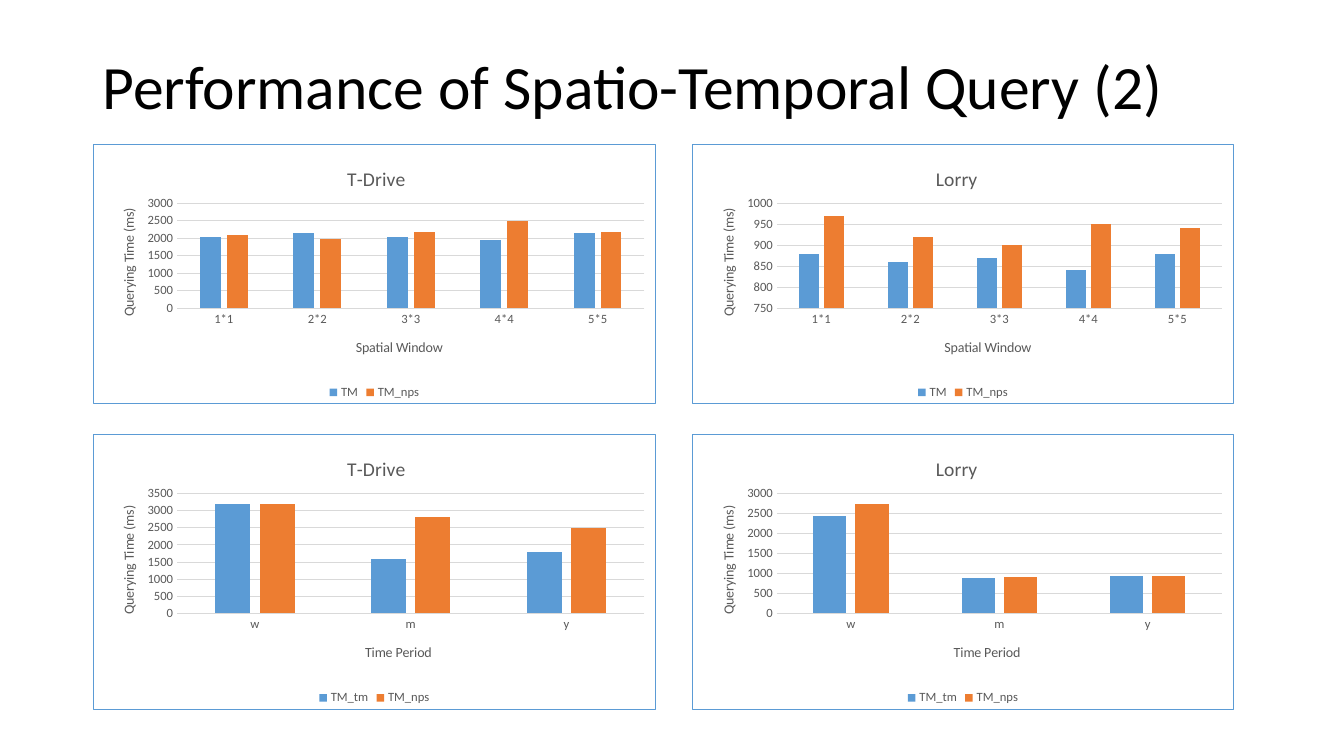
from pptx import Presentation
from pptx.chart.data import CategoryChartData
from pptx.dml.color import RGBColor
from pptx.enum.chart import XL_CHART_TYPE, XL_LEGEND_POSITION, XL_TICK_MARK
from pptx.enum.text import MSO_ANCHOR, PP_ALIGN
from pptx.oxml import parse_xml
from pptx.oxml.ns import nsdecls, qn
from pptx.util import Pt

FONT = "Calibri"
BLACK = RGBColor(0x00, 0x00, 0x00)
GRAY = RGBColor(0x59, 0x59, 0x59)
GRID = RGBColor(0xD9, 0xD9, 0xD9)
BLUE = RGBColor(0x5B, 0x9B, 0xD5)
ORANGE = RGBColor(0xED, 0x7D, 0x31)

# Columns as (left, width) and rows as (top, height), in points
COLUMNS = [(66.2, 402.5), (494.6, 386.6)]
ROWS = [(103, 185.8), (310.3, 196.6)]

WINDOWS = ["1*1", "2*2", "3*3", "4*4", "5*5"]
PERIODS = ["w", "m", "y"]
# Each row: category title, categories, then one entry per column:
# title, value scale (minimum, maximum, step), series
CHARTS = [
    ("Spatial Window", WINDOWS, [
        ("T-Drive", (0, 3000, 500), {"TM": [2040, 2160, 2040, 1960, 2140],
                                     "TM_nps": [2080, 1980, 2170, 2490, 2190]}),
        ("Lorry", (750, 1000, 50), {"TM": [880, 860, 870, 840, 880],
                                    "TM_nps": [970, 920, 900, 950, 940]}),
    ]),
    ("Time Period", PERIODS, [
        ("T-Drive", (0, 3500, 500), {"TM_tm": [3200, 1600, 1800],
                                     "TM_nps": [3200, 2800, 2500]}),
        ("Lorry", (0, 3000, 500), {"TM_tm": [2440, 890, 930],
                                   "TM_nps": [2740, 910, 940]}),
    ]),
]


def style_font(font, size, color):
    font.name, font.size, font.bold = FONT, Pt(size), False
    font.color.rgb = color


def write_title(owner, text, size):
    """Title a chart or an axis."""
    title = owner.chart_title if hasattr(owner, "chart_title") else owner.axis_title
    span = title.text_frame.paragraphs[0].add_run()
    span.text = text
    style_font(span.font, size, GRAY)


def set_layout(element, index, chart_size, left, top, size=None):
    """Place a chart part, given in points, inside its chart."""
    for old in element.findall(qn("c:layout")):
        element.remove(old)
    width, height = chart_size
    parts = [("xMode", "edge"), ("yMode", "edge"),
             ("x", round(left / width, 4)), ("y", round(top / height, 4))]
    if size:
        parts.insert(0, ("layoutTarget", "inner"))
        parts += [("w", round(size[0] / width, 4)), ("h", round(size[1] / height, 4))]
    body = "".join(f'<c:{name} val="{value}"/>' for name, value in parts)
    element.insert(index, parse_xml(
        f'<c:layout {nsdecls("c")}><c:manualLayout>{body}</c:manualLayout></c:layout>'))


def arrange(chart, width, height, category_width):
    """Position the plot and the axis titles."""
    size = (width, height)
    plot_left, plot_top = 60, 42
    plot_width, plot_height = width - 68, height - 110.5
    area = chart.plots[0]._element.getparent()
    set_layout(area, 0, size, plot_left, plot_top, (plot_width, plot_height))
    center = plot_left + plot_width / 2 - 10
    set_layout(chart.category_axis.axis_title._element, 1, size,
               center - category_width / 2, height - 49)
    set_layout(chart.value_axis.axis_title._element, 1, size,
               17, plot_top + plot_height / 2 - 36)
    set_layout(chart.chart_title._element, 1, size, width / 2 - 22, 12)


def add_border(chart):
    line = (f'<c:spPr {nsdecls("c", "a")}><a:solidFill><a:srgbClr val="FFFFFF"/></a:solidFill>'
            f'<a:ln w="{Pt(0.75)}"><a:solidFill><a:srgbClr val="{BLUE}"/></a:solidFill>'
            '</a:ln></c:spPr>')
    chart._chartSpace.find(qn("c:chart")).addnext(parse_xml(line))


def add_query_chart(page, box, title, category_title, categories, scale, series):
    left, top, width, height = box
    data = CategoryChartData()
    data.categories = categories
    for name, values in series.items():
        data.add_series(name, values)
    chart = page.shapes.add_chart(XL_CHART_TYPE.COLUMN_CLUSTERED, Pt(left), Pt(top),
                                  Pt(width), Pt(height), data).chart
    style_font(chart.font, 10, BLACK)
    write_title(chart, title, 14)

    # Columns
    plot = chart.plots[0]
    plot.gap_width, plot.overlap, plot.vary_by_categories = 219, -27, False
    for column, color in zip(plot.series, (BLUE, ORANGE)):
        column.format.fill.solid()
        column.format.fill.fore_color.rgb = color

    # Axes
    for axis, text in ((chart.category_axis, category_title),
                       (chart.value_axis, "Querying Time (ms)")):
        write_title(axis, text, 10)
        axis.major_tick_mark = axis.minor_tick_mark = XL_TICK_MARK.NONE
        style_font(axis.tick_labels.font, 9, GRAY)
    values = chart.value_axis
    values.minimum_scale, values.maximum_scale, values.major_unit = scale
    values.format.line.fill.background()
    for line in (chart.category_axis.format.line, values.major_gridlines.format.line):
        line.color.rgb = GRID
        line.width = Pt(0.75)

    # Legend
    chart.has_legend = True
    chart.legend.position = XL_LEGEND_POSITION.BOTTOM
    chart.legend.include_in_layout = False
    style_font(chart.legend.font, 9, GRAY)

    arrange(chart, width, height, 4.45 * len(category_title))
    add_border(chart)


def add_title(page, box, text):
    title = page.shapes.title
    title.left, title.top, title.width, title.height = map(Pt, box)
    title.text_frame.vertical_anchor = MSO_ANCHOR.MIDDLE
    para = title.text_frame.paragraphs[0]
    para.alignment, para.line_spacing = PP_ALIGN.LEFT, 0.9
    span = para.add_run()
    span.text = text
    style_font(span.font, 44, BLACK)


def build_slide(deck):
    page = deck.slides.add_slide(deck.slide_layouts[5])
    add_title(page, (66.2, 28.8, 828, 70.6), "Performance of Spatio-Temporal Query (2)")
    for (top, height), (category_title, categories, charts) in zip(ROWS, CHARTS):
        for (left, width), (title, scale, series) in zip(COLUMNS, charts):
            add_query_chart(page, (left, top, width, height), title,
                            category_title, categories, scale, series)


def main():
    deck = Presentation()
    deck.slide_width, deck.slide_height = Pt(960), Pt(540)
    build_slide(deck)
    deck.save("out.pptx")


if __name__ == "__main__":
    main()
